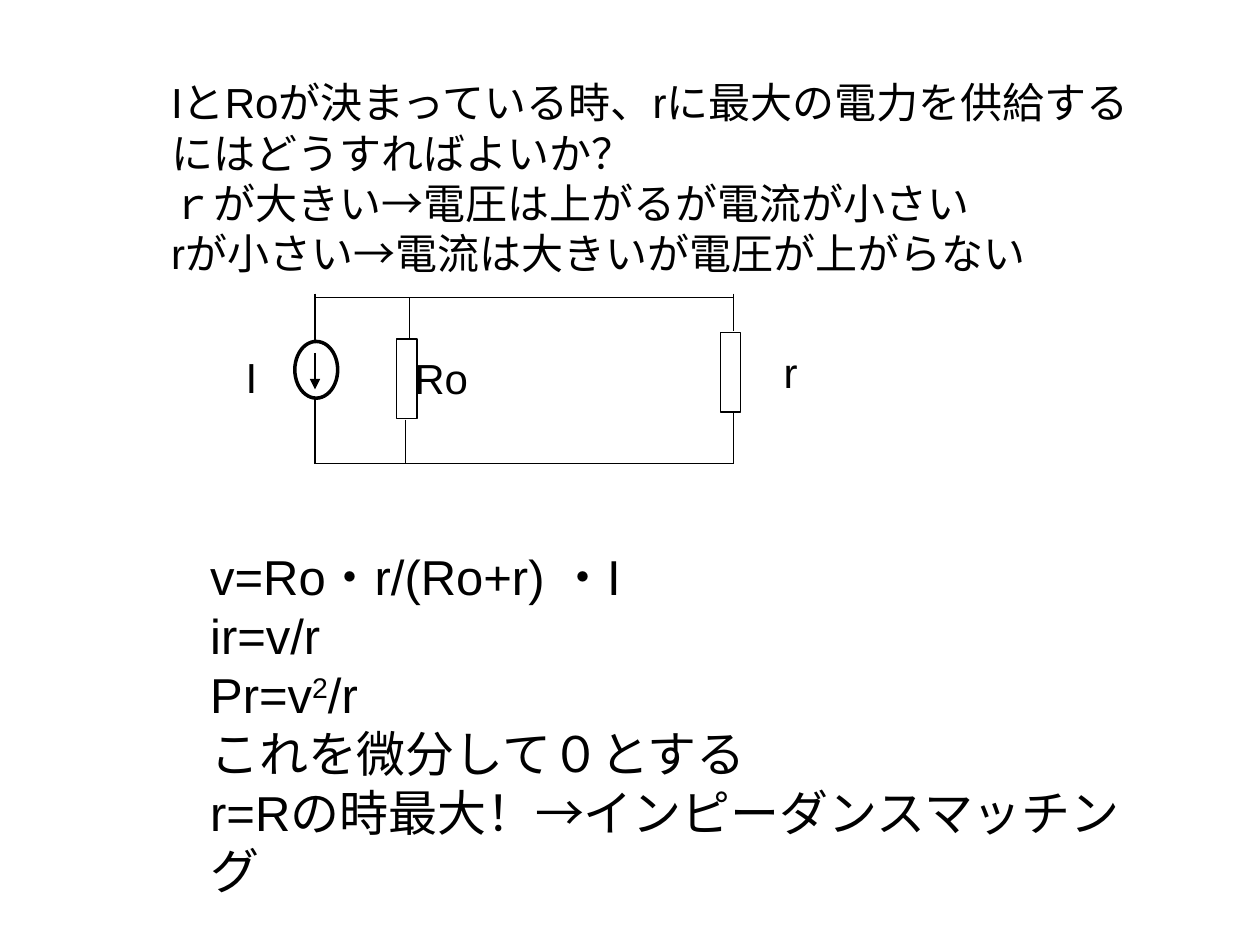
from pptx import Presentation
from pptx.dml.color import RGBColor
from pptx.enum.shapes import MSO_CONNECTOR as Link, MSO_SHAPE as Kind
from pptx.enum.text import MSO_AUTO_SIZE as Fit
from pptx.oxml.ns import qn
from pptx.util import Emu, Pt
from lxml.etree import SubElement

BLACK = RGBColor(0, 0, 0)
WHITE = RGBColor(255, 255, 255)
SCALE = 9144


def px(*nums):
    return [Emu(n * SCALE) for n in nums]


class Board:
    font = "Arial"
    thin = 0.75

    def __init__(self, slide):
        self.slide = slide
        self.shapes = slide.shapes

    def wire(self, x1, y1, x2, y2, arrow=False):
        wire = self.shapes.add_connector(Link.STRAIGHT, *px(x1, y1, x2, y2))
        wire.line.color.rgb = BLACK
        wire.line.width = Pt(self.thin)
        props = wire._element.spPr
        if arrow:
            SubElement(props.find(qn("a:ln")), qn("a:tailEnd"), type="triangle")
        SubElement(props, qn("a:effectLst"))

    def symbol(self, kind, x, y, w, h, fill=None, width=thin):
        shape = self.shapes.add_shape(kind, *px(x, y, w, h))
        shape.shadow.inherit = False
        if fill is None:
            shape.fill.background()
        else:
            shape.fill.solid()
            shape.fill.fore_color.rgb = fill
        shape.line.color.rgb = BLACK
        shape.line.width = Pt(width)

    def text(self, x, y, w, h, lines, size=24, wrap=False):
        frame = self.shapes.add_textbox(*px(x, y, w, h)).text_frame
        frame.word_wrap = wrap
        frame.auto_size = Fit.SHAPE_TO_FIT_TEXT
        for i, line in enumerate(lines):
            para = frame.add_paragraph() if i else frame.paragraphs[0]
            for j, piece in enumerate(line.split("^")):
                run = para.add_run()
                run.text = piece
                run.font.name = self.font
                run.font.size = Pt(size)
                run.font.color.rgb = BLACK
                if j % 2:
                    run.font._element.set("baseline", "30000")


def main():
    deck = Presentation()
    deck.slide_width, deck.slide_height = px(1000, 750)
    board = Board(deck.slides.add_slide(deck.slide_layouts[6]))

    left, right, top, base = 250, 582, 236, 368
    board.wire(left, 233, left, base)
    board.symbol(Kind.OVAL, 234, 271, 34, 45, WHITE, 2)
    board.wire(left, 280, left, 309, arrow=True)

    for x, y in (315, 269), (572, 264):
        board.symbol(Kind.RECTANGLE, x, y, 16, 63)
    board.wire(325, top, 325, 268)
    board.wire(322, 333, 322, base)
    board.wire(right, 233, right, 263)
    board.wire(right, 327, right, base)
    for y in top, base:
        board.wire(left, y, right, y)

    for name, x, y, w in ("Ro", 319, 275, 63), ("r", 612, 270, 31), ("I", 185, 274, 29):
        board.text(x, y, w, 50, [name])

    board.text(126, 56, 805, 172, [
        "IとRoが決まっている時、rに最大の電力を供給するにはどうすればよいか？",
        "ｒが大きい→電圧は上がるが電流が小さい",
        "rが小さい→電流は大きいが電圧が上がらない",
    ], wrap=True)
    board.text(157, 429, 774, 246, [
        "v=Ro・r/(Ro+r) ・I",
        "ir=v/r",
        "Pr=v^2^/r",
        "これを微分して０とする",
        "r=Rの時最大！→インピーダンスマッチング",
    ], 28, True)

    deck.save("out.pptx")


if __name__ == "__main__":
    main()
